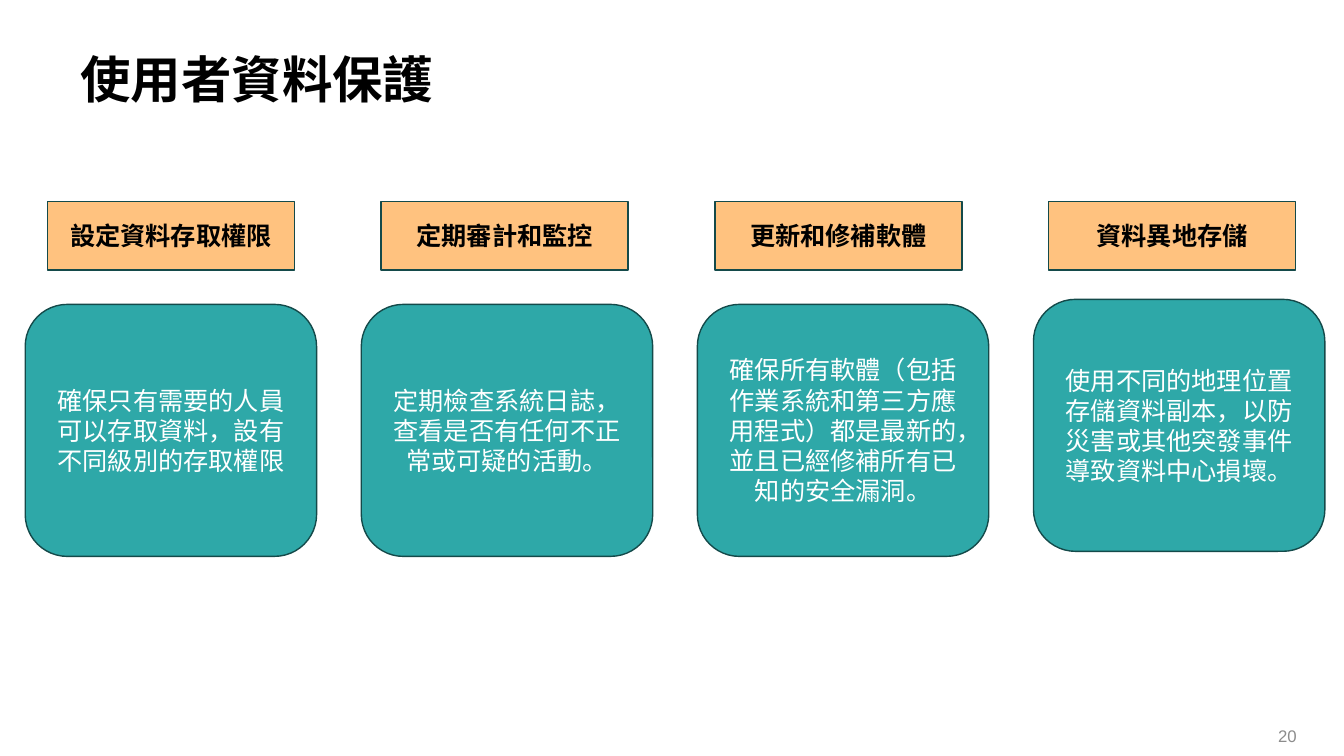
"""Build the slide on user data protection: four measures with explanations."""
from pptx import Presentation
from pptx.dml.color import RGBColor
from pptx.enum.shapes import MSO_SHAPE
from pptx.enum.text import MSO_ANCHOR, PP_ALIGN
from pptx.util import Inches, Pt

MEASURES = [
    ("設定資料存取權限", "確保只有需要的人員可以存取資料，設有不同級別的存取權限", 3.02),
    ("定期審計和監控", "定期檢查系統日誌，查看是否有任何不正常或可疑的活動。", 3.02),
    ("更新和修補軟體", "確保所有軟體（包括作業系統和第三方應用程式）都是最新的，並且已經修補所有已知的安全漏洞。", 3.02),
    ("資料異地存儲", "使用不同的地理位置存儲資料副本，以防災害或其他突發事件導致資料中心損壞。", 2.97),
]


def write(holder, text, size, color, align, bold=False):
    frame = holder.text_frame
    frame.word_wrap = True
    frame.vertical_anchor = MSO_ANCHOR.MIDDLE
    paragraph = frame.paragraphs[0]
    paragraph.alignment = align
    run = paragraph.add_run()
    run.text = text
    run.font.name = "Arial"
    run.font.size = Pt(size)
    run.font.bold = bold
    run.font.color.rgb = RGBColor.from_string(color)


def add_card(kind, left, top, width, height, fill):
    card = slide.shapes.add_shape(
        kind, Inches(left), Inches(top), Inches(width), Inches(height))
    card.shadow.inherit = False
    card.fill.solid()
    card.fill.fore_color.rgb = RGBColor.from_string(fill)
    card.line.color.rgb = RGBColor.from_string("144A4A")
    card.line.width = Pt(1)
    return card


presentation = Presentation()
presentation.slide_width = Inches(13.33)
presentation.slide_height = Inches(7.5)
slide = presentation.slides.add_slide(presentation.slide_layouts[6])

page_number = slide.shapes.add_textbox(Inches(11.6), Inches(7.1), Inches(1.36), Inches(0.4))
write(page_number, "20", 12, "8C8C8C", PP_ALIGN.RIGHT)

title = slide.shapes.add_textbox(Inches(0.7), Inches(0.4), Inches(12.27), Inches(0.76))
write(title, "使用者資料保護", 36, "000000", PP_ALIGN.LEFT, bold=True)

for column, (measure, explanation, top) in enumerate(MEASURES):
    body = add_card(MSO_SHAPE.ROUNDED_RECTANGLE, 0.25 + column * 10 / 3, top, 2.89, 2.5, "2EA8A8")
    write(body, explanation, 18, "FFFFFF", PP_ALIGN.CENTER)
    heading = add_card(MSO_SHAPE.RECTANGLE, 0.47 + column * 3.31, 2, 2.45, 0.68, "FFC27F")
    write(heading, measure, 18, "000000", PP_ALIGN.CENTER, bold=True)

presentation.save("out.pptx")
